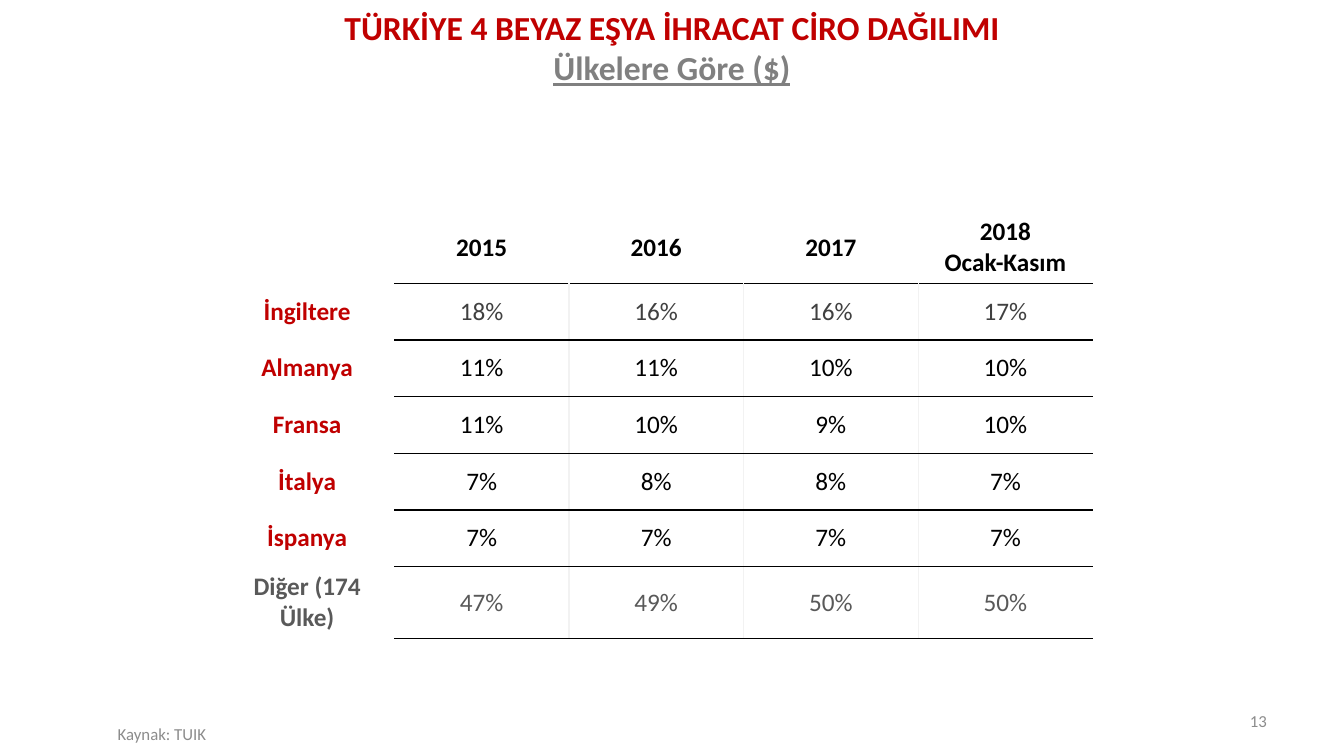
from lxml import etree
from pptx import Presentation
from pptx.dml.color import RGBColor
from pptx.enum.text import MSO_ANCHOR, PP_ALIGN
from pptx.oxml.ns import qn
from pptx.util import Pt

LEFT, CENTER, RIGHT = PP_ALIGN.LEFT, PP_ALIGN.CENTER, PP_ALIGN.RIGHT
MIDDLE = MSO_ANCHOR.MIDDLE

RED = RGBColor(0xC0, 0x00, 0x00)
BLACK = RGBColor(0x00, 0x00, 0x00)
CHARCOAL = RGBColor(0x40, 0x40, 0x40)
DARK_GRAY = RGBColor(0x59, 0x59, 0x59)
GRAY = RGBColor(0x80, 0x80, 0x80)
NOTE_GRAY = RGBColor(0x8C, 0x8C, 0x8C)
PALE_GRAY = RGBColor(0xF2, 0xF2, 0xF2)

YEARS = ["2015", "2016", "2017", "2018\nOcak-Kasım"]
# Country, label colour, value colour, shares in percent
SHARES = [
    ("İngiltere", RED, CHARCOAL, (18, 16, 16, 17)),
    ("Almanya", RED, BLACK, (11, 11, 10, 10)),
    ("Fransa", RED, BLACK, (11, 10, 9, 10)),
    ("İtalya", RED, BLACK, (7, 8, 8, 7)),
    ("İspanya", RED, BLACK, (7, 7, 7, 7)),
    ("Diğer (174 Ülke)", DARK_GRAY, DARK_GRAY, (47, 49, 50, 50)),
]


def write(paragraph, text, size=18, color=BLACK, bold=False, underline=False,
          align=CENTER):
    paragraph.alignment = align
    run = paragraph.add_run()
    run.text = text
    font = run.font
    font.name, font.size, font.bold = "Calibri", Pt(size), bold
    font.underline = underline
    font.color.rgb = color


def set_borders(cell, **colors):
    """Draw the sides named L, R, T, B in 1 pt lines and clear the others."""
    properties = cell._tc.get_or_add_tcPr()
    for side in "LRTB":
        line = etree.SubElement(properties, qn(f"a:ln{side}"), w=str(Pt(1)))
        if side in colors:
            fill = etree.SubElement(line, qn("a:solidFill"))
            etree.SubElement(fill, qn("a:srgbClr"), val=str(colors[side]))
        else:
            etree.SubElement(line, qn("a:noFill"))


class ExportSlide:
    def __init__(self, presentation):
        self.slide = presentation.slides.add_slide(presentation.slide_layouts[5])

    def title(self, heading, subheading, left, top, width, height):
        title = self.slide.shapes.title
        title.left, title.top = Pt(left), Pt(top)
        title.width, title.height = Pt(width), Pt(height)
        frame = title.text_frame
        frame.vertical_anchor = MIDDLE
        write(frame.paragraphs[0], heading, size=24, color=RED, bold=True)
        write(frame.add_paragraph(), subheading, size=24, color=GRAY, bold=True,
              underline=True)

    def note(self, text, left, top, width, height, align=LEFT):
        box = self.slide.shapes.add_textbox(Pt(left), Pt(top), Pt(width), Pt(height))
        frame = box.text_frame
        frame.word_wrap = True
        frame.vertical_anchor = MIDDLE
        write(frame.paragraphs[0], text, size=12, color=NOTE_GRAY, align=align)

    def cell(self, cell, text, borders, **style):
        set_borders(cell, **borders)
        cell.fill.background()
        cell.vertical_anchor = MIDDLE
        frame = cell.text_frame
        for number, line in enumerate(text.split("\n")):
            paragraph = frame.add_paragraph() if number else frame.paragraphs[0]
            write(paragraph, line, **style)

    def share_table(self, left, top, column_width, row_height):
        rows, columns = len(SHARES) + 1, len(YEARS) + 1
        table = self.slide.shapes.add_table(
            rows, columns, Pt(left), Pt(top),
            Pt(columns * column_width), Pt(rows * row_height)).table
        table.first_row = table.horz_banding = False
        for column in table.columns:
            column.width = Pt(column_width)
        for row in table.rows:
            row.height = Pt(row_height)

        self.cell(table.cell(0, 0), "", {})
        for c, year in enumerate(YEARS, 1):
            self.cell(table.cell(0, c), year, {"B": BLACK}, bold=True)
        for r, (country, label_color, value_color, shares) in enumerate(SHARES, 1):
            self.cell(table.cell(r, 0), country, {}, color=label_color, bold=True)
            for c, share in enumerate(shares, 1):
                borders = {"T": BLACK, "B": BLACK}
                if c > 1:
                    borders["L"] = PALE_GRAY
                if c < len(shares):
                    borders["R"] = PALE_GRAY
                self.cell(table.cell(r, c), f"{share}%", borders, color=value_color)


def main():
    presentation = Presentation()
    presentation.slide_width, presentation.slide_height = Pt(960), Pt(540)
    slide = ExportSlide(presentation)
    slide.title("TÜRKİYE 4 BEYAZ EŞYA İHRACAT CİRO DAĞILIMI", "Ülkelere Göre ($)",
                76, 2.5, 808, 62.5)
    slide.share_table(157, 151.2, 124.7, 40.5)
    slide.note("Kaynak: TUIK", 77, 510, 228, 28.8)
    slide.note("13", 688, 500.5, 224, 28.8, align=RIGHT)
    presentation.save("out.pptx")


if __name__ == "__main__":
    main()
